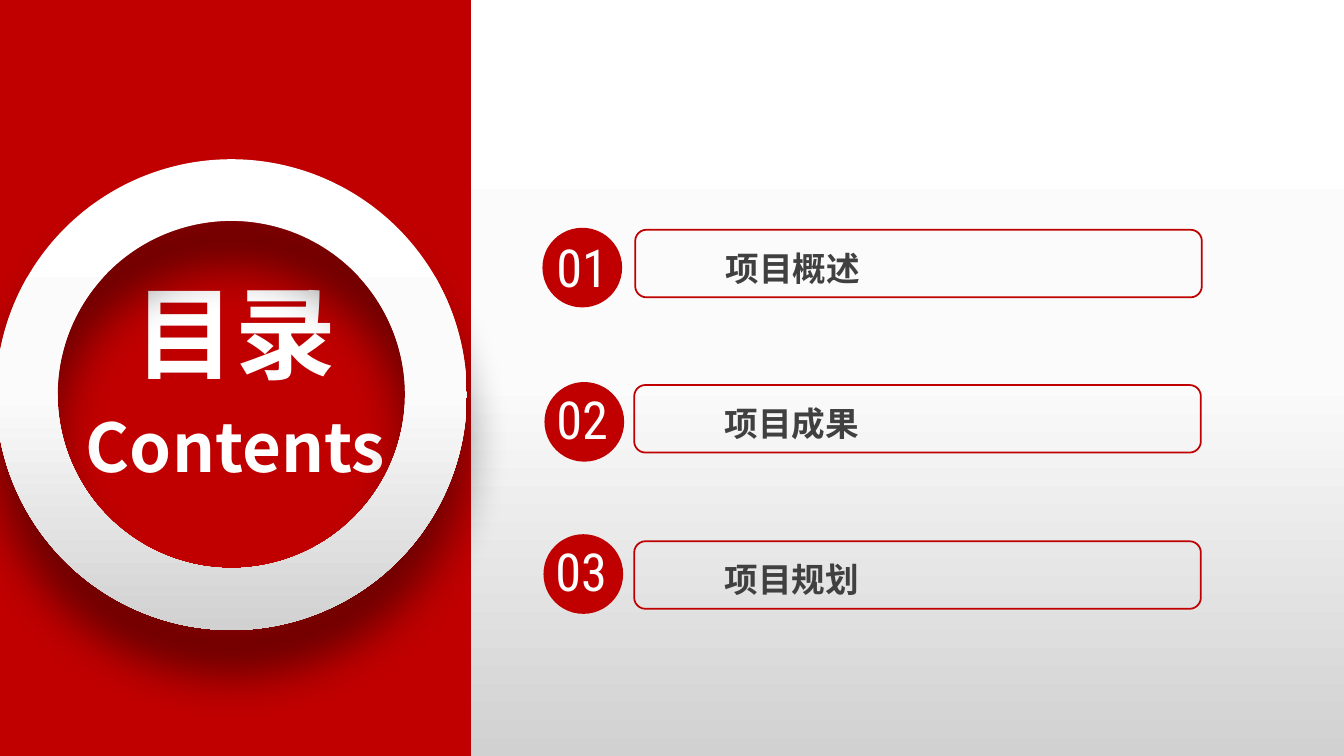
from lxml import etree
from pptx import Presentation
from pptx.dml.color import RGBColor
from pptx.enum.shapes import MSO_SHAPE as Shape
from pptx.enum.text import MSO_ANCHOR as Anchor, MSO_AUTO_SIZE as AutoSize, PP_ALIGN as Align
from pptx.oxml import parse_xml
from pptx.oxml.ns import nsdecls, qn
from pptx.util import Inches, Pt

COLORS = {"red": "C00000", "white": "FFFFFF", "text": "404040", "black": "000000"}
GRADIENT = [(0, "FFFFFF"), (50, "FBFBFB"), (100, "D1D1D1")]
CJK_FONT = "Noto Sans CJK SC"
NUMBER_FONT = "Roboto Condensed"
TITLE = [("目录", 72), ("Contents", 48)]
ITEMS = [
    {"number": "01", "label": "项目概述", "disc": (5.38, 2.26), "digits": (5.42, 2.28), "frame": (6.30, 2.28)},
    {"number": "02", "label": "项目成果", "disc": (5.40, 3.79), "digits": (5.42, 3.79), "frame": (6.29, 3.82)},
    {"number": "03", "label": "项目规划", "disc": (5.39, 5.30), "digits": (5.41, 5.30), "frame": (6.29, 5.37)},
]
DISC_SIZE = (0.79, 0.79)
DIGITS_SIZE = (1.12, 0.70)
FRAME_SIZE = (5.62, 0.67)
LABEL_SIZE = (4.12, 0.56)
LABEL_OFFSET = (0.77, 0.10)


def rgb(name):
    return RGBColor.from_string(COLORS[name])


def place(position, size):
    return [Inches(value) for value in (*position, *size)]


def add_shape(shapes, kind, position, size, fill=None, line=None):
    shape = shapes.add_shape(kind, *place(position, size))
    shape.shadow.inherit = False
    if fill:
        shape.fill.solid()
        shape.fill.fore_color.rgb = rgb(fill)
    else:
        shape.fill.background()
    if line:
        shape.line.color.rgb = rgb(line)
        shape.line.width = Pt(1.25)
    else:
        shape.line.fill.background()
    return shape


def style_text(paragraph, font_name, size, color, bold=False):
    for run in paragraph.runs:
        font = run.font
        font.name = font_name
        font.size = Pt(size)
        font.bold = bold
        font.color.rgb = rgb(color)
        east_asian = etree.SubElement(font._element, qn("a:ea"))
        east_asian.set("typeface", font_name)


def write_line(shape, text, font_name, size, color, bold=False):
    frame = shape.text_frame
    frame.word_wrap = True
    frame.auto_size = AutoSize.SHAPE_TO_FIT_TEXT
    frame.vertical_anchor = Anchor.TOP
    frame.text = text
    frame.paragraphs[0].alignment = Align.LEFT
    style_text(frame.paragraphs[0], font_name, size, color, bold)


def apply_gradient(fill, element):
    fill.solid()
    solid = element.find(".//" + qn("a:solidFill"))
    stops = "".join(
        f'<a:gs pos="{position * 1000}"><a:srgbClr val="{color}"/></a:gs>'
        for position, color in GRADIENT
    )
    gradient = parse_xml(
        f'<a:gradFill {nsdecls("a")} rotWithShape="1"><a:gsLst>{stops}</a:gsLst>'
        '<a:lin ang="5400000" scaled="0"/></a:gradFill>'
    )
    solid.getparent().replace(solid, gradient)


def add_drop_shadow(shape, opacity, blur, distance):
    effects = shape._element.spPr.find(qn("a:effectLst"))
    effects.append(parse_xml(
        f'<a:outerShdw {nsdecls("a")} blurRad="{Pt(blur)}" dist="{Pt(distance)}" dir="5400000" '
        f'algn="t" rotWithShape="0"><a:srgbClr val="{COLORS["black"]}">'
        f'<a:alpha val="{opacity * 1000}"/></a:srgbClr></a:outerShdw>'
    ))


def add_title(slide):
    box = slide.shapes.add_textbox(*place((0.69, 3.39), (3.29, 0.72)))
    frame = box.text_frame
    frame.word_wrap = True
    frame.vertical_anchor = Anchor.MIDDLE
    frame.text = "\n".join(text for text, size in TITLE)
    for paragraph, (text, size) in zip(frame.paragraphs, TITLE):
        paragraph.alignment = Align.CENTER
        spacing = etree.SubElement(paragraph._p.get_or_add_pPr(), qn("a:spcBef"))
        etree.SubElement(spacing, qn("a:spcPct")).set("val", "20000")
        style_text(paragraph, CJK_FONT, size, "white", True)


def add_item(slide, item):
    badge = slide.shapes.add_group_shape().shapes
    add_shape(badge, Shape.OVAL, item["disc"], DISC_SIZE, fill="red")
    digits = badge.add_textbox(*place(item["digits"], DIGITS_SIZE))
    write_line(digits, item["number"], NUMBER_FONT, 37.4, "white")

    entry = slide.shapes.add_group_shape().shapes
    label_position = [start + offset for start, offset in zip(item["frame"], LABEL_OFFSET)]
    label = add_shape(entry, Shape.ROUNDED_RECTANGLE, label_position, LABEL_SIZE)
    write_line(label, item["label"], CJK_FONT, 24, "text", True)
    add_shape(entry, Shape.ROUNDED_RECTANGLE, item["frame"], FRAME_SIZE, line="red")


def main():
    presentation = Presentation()
    presentation.slide_width = Inches(13.33)
    presentation.slide_height = Inches(7.5)
    slide = presentation.slides.add_slide(presentation.slide_layouts[6])
    apply_gradient(slide.background.fill, slide._element)

    add_shape(slide.shapes, Shape.RECTANGLE, (0, 0), (4.67, 7.5), fill="red")
    add_title(slide)
    ring = add_shape(slide.shapes, Shape.DONUT, (-0.04, 1.58), (4.67, 4.67))
    ring.adjustments[0] = 0.131
    apply_gradient(ring.fill, ring._element)
    add_drop_shadow(ring, opacity=43, blur=33, distance=33)
    for item in ITEMS:
        add_item(slide, item)
    presentation.save("out.pptx")


if __name__ == "__main__":
    main()
